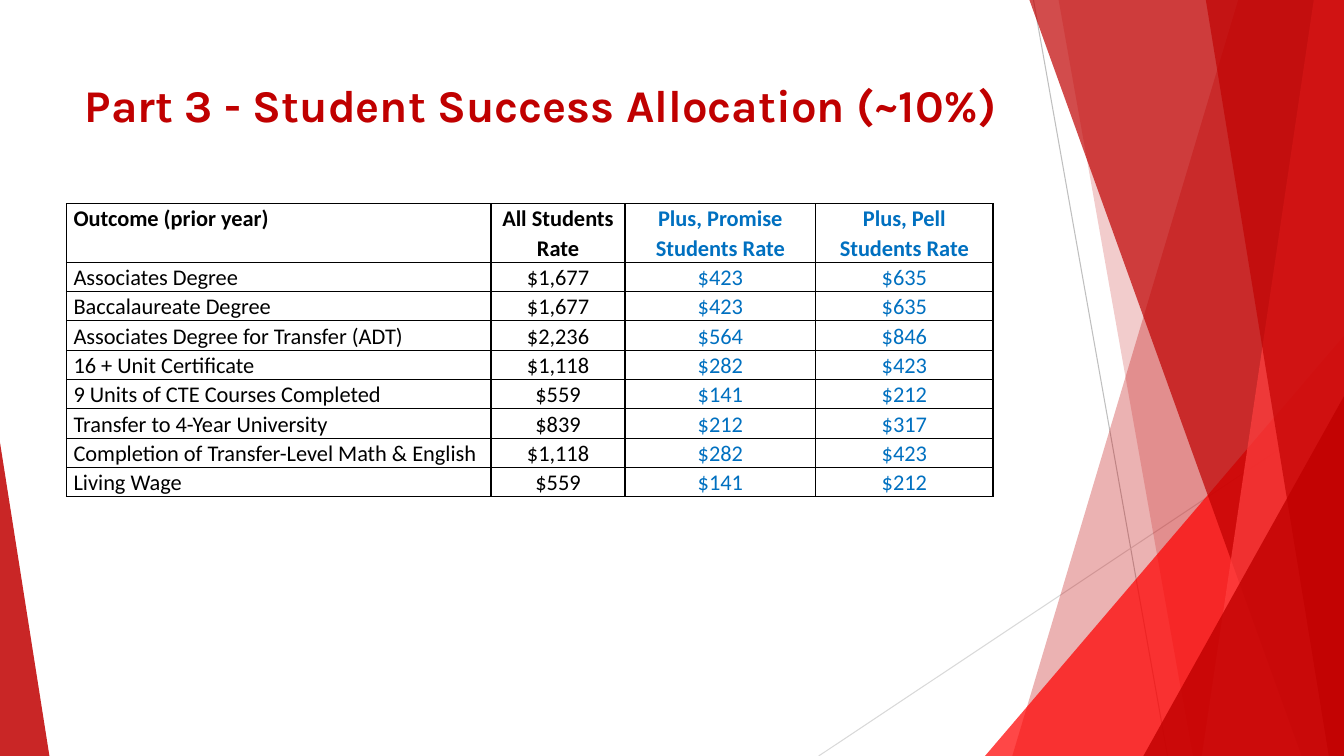
from lxml.etree import SubElement
from pptx import Presentation
from pptx.dml.color import RGBColor
from pptx.enum.shapes import MSO_CONNECTOR as Connector, MSO_SHAPE as Shape
from pptx.enum.text import MSO_ANCHOR as Anchor, PP_ALIGN as Align
from pptx.oxml.ns import qn
from pptx.util import Inches, Pt

WHITE = RGBColor(0xFF, 0xFF, 0xFF)
BLACK = RGBColor(0x00, 0x00, 0x00)
BLUE = RGBColor(0x00, 0x70, 0xC0)
RED = RGBColor(0xC0, 0x00, 0x00)
DARK_RED = RGBColor(0xBF, 0x00, 0x00)
BRIGHT_RED = RGBColor(0xFF, 0x00, 0x00)
LIGHT_RED = RGBColor(0xFF, 0x40, 0x40)
GRAY = RGBColor(0xBF, 0xBF, 0xBF)
PALE_GRAY = RGBColor(0xD9, 0xD9, 0xD9)

WIDTH, HEIGHT = 13.33, 7.5
LINE_HEIGHT = 0.29
COLUMN_WIDTHS = [4.21, 1.33, 1.89, 1.76]
COLUMN_COLORS = [BLACK, BLACK, BLUE, BLUE]
RATES = [
    ("Outcome (prior year)", "All Students Rate", "Plus, Promise Students Rate", "Plus, Pell Students Rate"),
    ("Associates Degree", "$1,677", "$423", "$635"),
    ("Baccalaureate Degree", "$1,677", "$423", "$635"),
    ("Associates Degree for Transfer (ADT)", "$2,236", "$564", "$846"),
    ("16 + Unit Certificate", "$1,118", "$282", "$423"),
    ("9 Units of CTE Courses Completed", "$559", "$141", "$212"),
    ("Transfer to 4-Year University", "$839", "$212", "$317"),
    ("Completion of Transfer-Level Math & English", "$1,118", "$282", "$423"),
    ("Living Wage", "$559", "$141", "$212"),
]


def apply_format(target, values):
    """Set each attribute of the target from a dict of values."""
    for name, value in values.items():
        setattr(target, name, value)


def write_text(frame, text, color, font, align=Align.LEFT, spacing=1.0):
    """Put one formatted run of text into a text frame."""
    para = frame.paragraphs[0]
    apply_format(para, {"alignment": align, "line_spacing": spacing})
    span = para.add_run()
    span.text = text
    apply_format(span.font, font)
    span.font.color.rgb = color


def paint(shape, color, opacity):
    """Give a shape a translucent fill with no outline or shadow."""
    shape.shadow.inherit = False
    shape.line.fill.background()
    shape.fill.solid()
    shape.fill.fore_color.rgb = color
    hue = shape.fill._xPr.find(".//" + qn("a:srgbClr"))
    SubElement(hue, qn("a:alpha"), val=str(opacity * 1000))


def add_thin_line(page, start, end, color):
    """Draw a hairline between two points."""
    line = page.shapes.add_connector(Connector.STRAIGHT, *map(Inches, start + end))
    line.line.color.rgb = color
    line.line.width = Pt(0.75)
    SubElement(line._element.spPr, qn("a:effectLst"))


def add_band(page, box, top_x, bottom_x, color, opacity):
    """Draw a band from a slanted left edge to the right side of the box."""
    left, top, width, height = box
    right, bottom = left + width, top + height
    corners = [(right, top), (right, bottom), (left + bottom_x, bottom)]
    builder = page.shapes.build_freeform(Inches(left + top_x), Inches(top))
    builder.add_line_segments([(Inches(x), Inches(y)) for x, y in corners], close=True)
    paint(builder.convert_to_shape(), color, opacity)


def add_corner(page, box, apex, color, opacity):
    """Draw a right triangle whose apex sits at the given share of its width."""
    corner = page.shapes.add_shape(Shape.ISOSCELES_TRIANGLE, *map(Inches, box))
    corner.adjustments[0] = apex
    paint(corner, color, opacity)


def add_decoration(page, box):
    """Draw the red facets and hairlines along the sides of the box."""
    left, top, width, height = box
    right, bottom = left + width, top + height

    def corner_box(corner_width, corner_height):
        return right - corner_width, bottom - corner_height, corner_width, corner_height

    add_thin_line(page, (right - 3.08, top), (right - 1.75, bottom), GRAY)
    add_thin_line(page, (right, top + 4.03), (right - 5.21, bottom), PALE_GRAY)
    bands = [
        (3.29, 2.24, 0, RED, 30),
        (2.83, 0, 1.33, RED, 20),
        (3.12, 0, 2.7, DARK_RED, 70),
        (1.41, 1.11, 0, LIGHT_RED, 70),
        (1.37, 0, 1.22, RED, 65),
    ]
    for index, (band_width, top_x, bottom_x, color, opacity) in enumerate(bands):
        if index == 2:
            add_corner(page, corner_box(3.56, 4.17), 1, BRIGHT_RED, 72)
        add_band(page, corner_box(band_width, height), top_x, bottom_x, color, opacity)
    add_corner(page, corner_box(1.99, 3.57), 1, RED, 80)
    add_corner(page, (left, bottom - 3.11, 0.49, 3.11), 0, RED, 85)


def add_title(page, box):
    """Place the slide title in the box."""
    title = page.shapes.title
    apply_format(title, dict(zip(("left", "top", "width", "height"), map(Inches, box))))
    apply_format(title.text_frame, {"word_wrap": True, "vertical_anchor": Anchor.MIDDLE})
    font = {"name": "Karla", "size": Pt(32.4), "bold": True}
    write_text(title.text_frame, "Part 3 - Student Success Allocation (~10%)", RED, font)


def add_borders(cell):
    """Draw a black line on all four sides of a cell."""
    props = cell._tc.get_or_add_tcPr()
    for index, side in enumerate(("lnL", "lnR", "lnT", "lnB")):
        border = props.makeelement(qn("a:" + side), {"w": str(Pt(1))})
        fill = SubElement(border, qn("a:solidFill"))
        SubElement(fill, qn("a:srgbClr"), val=str(BLACK))
        props.insert(index, border)


def add_rate_table(page, box):
    """Place the table of rates per outcome in the box."""
    shape = page.shapes.add_table(len(RATES), len(COLUMN_WIDTHS), *map(Inches, box))
    table = shape.table
    for column, width in zip(table.columns, COLUMN_WIDTHS):
        column.width = Inches(width)
    margins = {"margin_left": Inches(0.07), "margin_right": Inches(0.07), "margin_top": 0, "margin_bottom": 0}
    for row, values in enumerate(RATES):
        header = row == 0
        table.rows[row].height = Inches(LINE_HEIGHT * (2 if header else 1))
        font = {"name": "Calibri", "size": Pt(16), "bold": header}
        for column, text in enumerate(values):
            cell = table.cell(row, column)
            apply_format(cell, margins)
            cell.fill.solid()
            cell.fill.fore_color.rgb = WHITE
            align = Align.CENTER if column else Align.LEFT
            write_text(cell.text_frame, text, COLUMN_COLORS[column], font, align, 1.07)
            add_borders(cell)


def main():
    """Build the slide and save the deck."""
    deck = Presentation()
    apply_format(deck, {"slide_width": Inches(WIDTH), "slide_height": Inches(HEIGHT)})
    page = deck.slides.add_slide(deck.slide_layouts[5])
    add_decoration(page, (0, 0, WIDTH, HEIGHT))
    add_title(page, (0.74, 0.67, 9.4, 0.74))
    add_rate_table(page, (0.66, 2.02, sum(COLUMN_WIDTHS), LINE_HEIGHT * (len(RATES) + 1)))
    deck.save("out.pptx")


if __name__ == "__main__":
    main()
